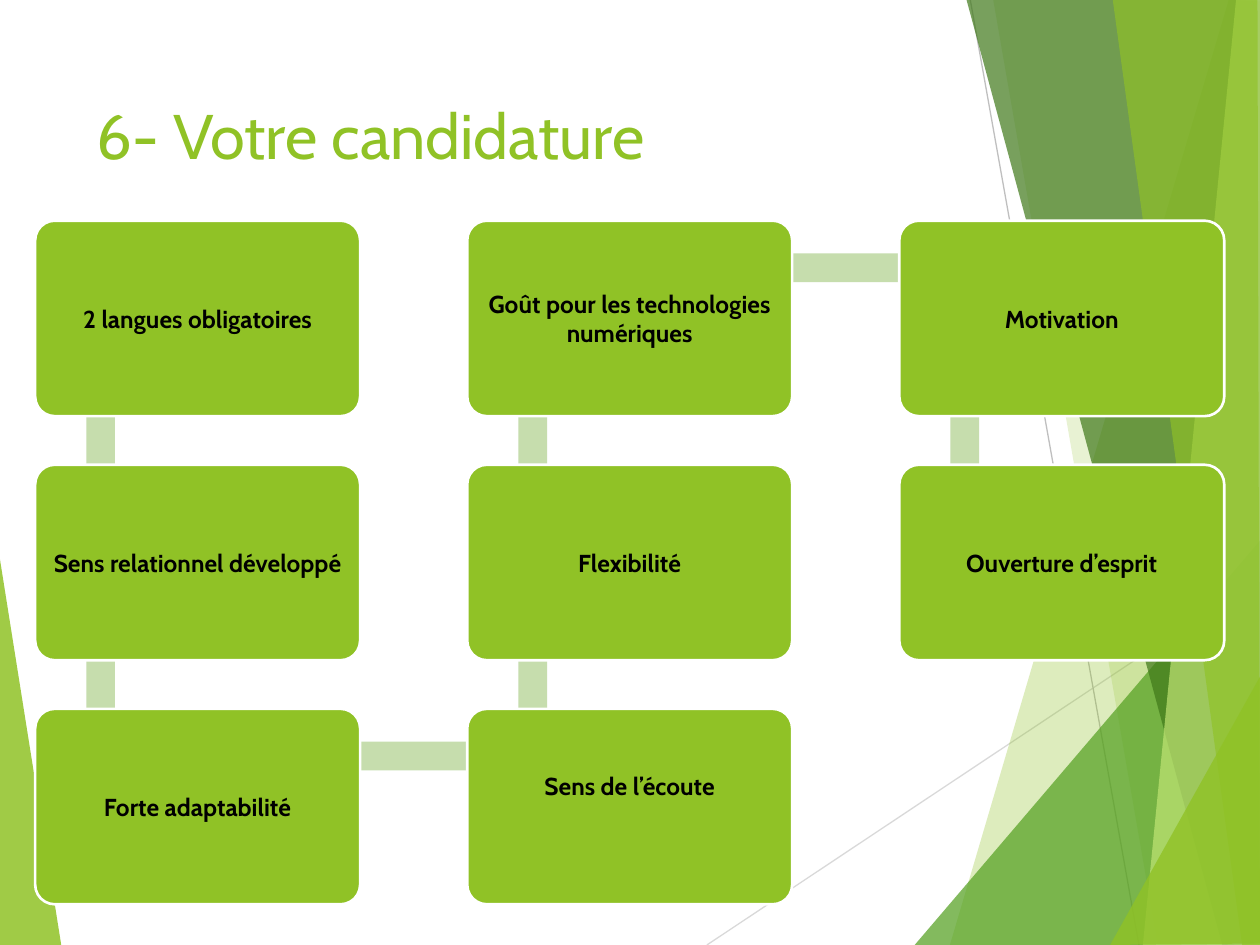
from itertools import pairwise
from lxml.etree import SubElement
from pptx import Presentation
from pptx.dml.color import RGBColor
from pptx.enum.shapes import MSO_CONNECTOR, MSO_SHAPE
from pptx.enum.text import MSO_ANCHOR, PP_ALIGN
from pptx.oxml.ns import qn
from pptx.util import Cm, Pt

HUES = {"lime": "90C226", "leaf": "54A021", "dark": "3F7819", "pale": "C0E474",
        "bar": "C6DDAD", "ink": "000000", "white": "FFFFFF",
        "light": "D9D9D9", "gray": "BFBFBF"}
FONT = "Cabin"
TITLE = "6- Votre candidature"
STEPS = [
    ("2 langues obligatoires", 0, 0),
    ("Sens relationnel développé", 0, 1),
    ("Forte adaptabilité", 0, 2),
    ("Sens de l’écoute", 1, 2),
    ("Flexibilité", 1, 1),
    ("Goût pour les technologies numériques", 1, 0),
    ("Motivation", 2, 0),
    ("Ouverture d’esprit", 2, 1),
]
RAISED = {"Sens de l’écoute": 0.85}
LINES = [
    ("light", 14.25, 19.05, 25.43, 11.61),
    ("gray", 19.56, 0, 22.96, 19.05),
]
EDGE = [("lime", 85, [(-0.02, 11.15), (1.24, 19.08), (-0.02, 19.05)])]
WEDGES = [
    ("lime", 30, [(24.77, 0), (19.15, 19.05), (25.45, 19.08), (25.43, 0.03)]),
    ("lime", 20, [(20.02, -0.02), (23.34, 19.05), (25.43, 19.05), (25.43, -0.02)]),
    ("leaf", 72, [(18.44, 19.05), (25.4, 10.9), (25.43, 19.05)]),
    ("dark", 70, [(19.48, -0.02), (24.64, 19.05), (25.43, 19.02), (25.43, -0.02)]),
    ("pale", 70, [(24.92, -0.02), (23.04, 19.05), (25.43, 19.05), (25.4, -0.02)]),
    ("lime", 65, [(22.43, -0.02), (25.04, 19.05), (25.4, 19.05), (25.35, -0.02)]),
    ("lime", 80, [(22.38, 19.05), (25.43, 13.59), (25.43, 19.02)]),
]
LEFT, TOP = 0.71, 4.45
WIDE, HIGH = 6.55, 3.94
STEP_X, STEP_Y = 8.71, 4.92
THICK = 0.58


def tint(name):
    return RGBColor.from_string(HUES[name])


def write(shape, text, size=14, hue="ink", bold=False, align=PP_ALIGN.CENTER,
          anchor=MSO_ANCHOR.MIDDLE, inset=0.15, lift=0):
    frame = shape.text_frame
    frame.word_wrap = True
    frame.vertical_anchor = anchor
    frame.margin_left = frame.margin_right = frame.margin_top = Cm(inset)
    frame.margin_bottom = Cm(inset + lift)
    para = frame.paragraphs[0]
    para.alignment = align
    run = para.add_run()
    run.text = text
    run.font.name = FONT
    run.font.size = Pt(size)
    run.font.bold = bold
    run.font.color.rgb = tint(hue)


def paint(shape, hue, alpha=100):
    shape.shadow.inherit = False
    shape.fill.solid()
    shape.fill.fore_color.rgb = tint(hue)
    shape.line.fill.background()
    if alpha < 100:
        color = shape.fill._xPr.find(qn("a:solidFill"))[0]
        SubElement(color, qn("a:alpha")).set("val", str(alpha * 1000))


def draw_wedges(shapes, wedges):
    for hue, alpha, dots in wedges:
        first, *rest = [(Cm(x), Cm(y)) for x, y in dots]
        path = shapes.build_freeform(*first)
        path.add_line_segments(rest, close=True)
        paint(path.convert_to_shape(), hue, alpha)


def draw_lines(shapes):
    for hue, *ends in LINES:
        line = shapes.add_connector(MSO_CONNECTOR.STRAIGHT, *map(Cm, ends))
        line.line.color.rgb = tint(hue)
        line.line.width = Pt(0.75)
        SubElement(line._element.spPr, qn("a:effectLst"))


def spot(col, row):
    return LEFT + col * STEP_X, TOP + row * STEP_Y


def draw_bars(shapes):
    for (_, col, row), (_, col2, row2) in pairwise(STEPS):
        x, y = spot(min(col, col2), min(row, row2))
        if col == col2:
            area = x + 1.03, y + 0.98, THICK, 4.88
        else:
            area = x + 1.35, y + 0.66, 8.69, THICK
        paint(shapes.add_shape(MSO_SHAPE.RECTANGLE, *map(Cm, area)), "bar")


def draw_boxes(shapes):
    for text, col, row in STEPS:
        area = *spot(col, row), WIDE, HIGH
        box = shapes.add_shape(MSO_SHAPE.ROUNDED_RECTANGLE, *map(Cm, area))
        box.adjustments[0] = 0.1
        paint(box, "lime")
        box.line.color.rgb = tint("white")
        box.line.width = Pt(1.5)
        write(box, text, bold=True, lift=RAISED.get(text, 0))


def main():
    deck = Presentation()
    deck.slide_width, deck.slide_height = Cm(25.4), Cm(19.05)
    slide = deck.slides.add_slide(deck.slide_layouts[5])
    shapes = slide.shapes
    title = shapes.title
    title.left, title.top, title.width, title.height = map(Cm, (1.7, 1.7, 17.63, 3.66))
    write(title, TITLE, size=36, hue="lime", align=PP_ALIGN.LEFT,
          anchor=MSO_ANCHOR.TOP, inset=0.25)
    draw_wedges(shapes, EDGE)
    draw_lines(shapes)
    draw_wedges(shapes, WEDGES)
    draw_bars(shapes)
    draw_boxes(shapes)
    deck.save("out.pptx")


if __name__ == "__main__":
    main()
